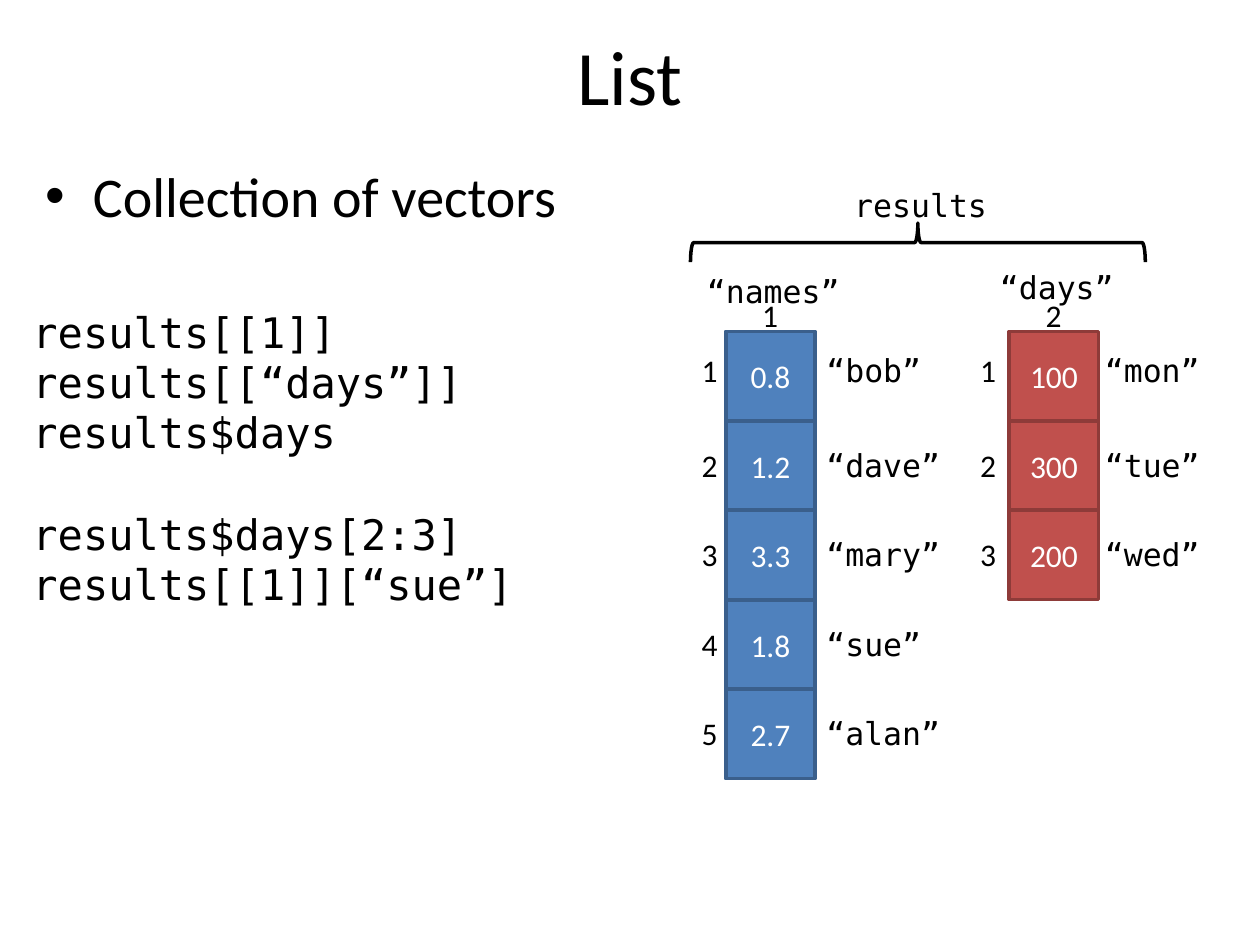
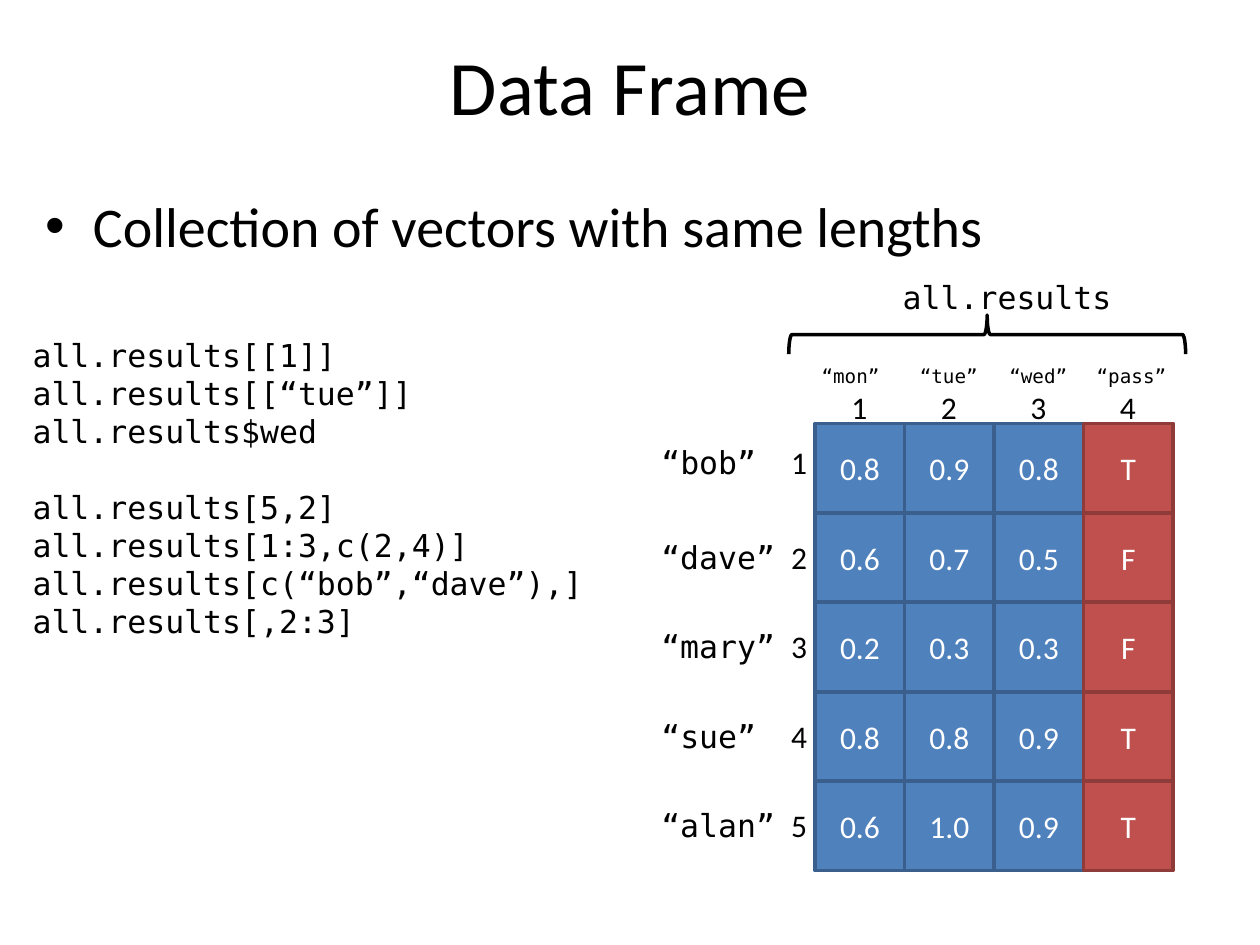
from lxml import etree
from pptx import Presentation
from pptx.dml.color import RGBColor
from pptx.enum.shapes import MSO_SHAPE as Shape
from pptx.enum.text import MSO_ANCHOR as Anchor, MSO_AUTO_SIZE as AutoSize, PP_ALIGN as Align
from pptx.oxml.ns import qn
from pptx.util import Inches, Pt

BLACK = RGBColor(0x00, 0x00, 0x00)
WHITE = RGBColor(0xFF, 0xFF, 0xFF)
BLUE = RGBColor(0x4F, 0x81, 0xBD)
DARK_BLUE = RGBColor(0x3A, 0x5F, 0x8C)
RED = RGBColor(0xC0, 0x50, 0x4D)
DARK_RED = RGBColor(0x8E, 0x3B, 0x39)
NUMERIC = (BLUE, DARK_BLUE)
OTHER = (RED, DARK_RED)

BODY_FONT = "Calibri"
CODE_FONT = "DejaVu Sans Mono"
CHARACTER_WIDTH = {BODY_FONT: 0.52, CODE_FONT: 0.61}  # in ems, rounded up
CODE_LINE_HEIGHT = 1.2  # in ems
INSET = 0.1
CELL = 0.71
LABEL_HEIGHT = 0.4
BRACE_HEIGHT = 0.31

TITLE_FRAME = {"word_wrap": True, "vertical_anchor": Anchor.MIDDLE, "auto_size": AutoSize.NONE}
BULLET_FRAME = {"word_wrap": True, "vertical_anchor": Anchor.TOP}
LABEL_FRAME = {"word_wrap": False, "vertical_anchor": Anchor.TOP,
               "auto_size": AutoSize.SHAPE_TO_FIT_TEXT}


def set_values(target, values):
    for name, value in values.items():
        setattr(target, name, value)


def write(paragraph, text, size=18, font=BODY_FONT, color=BLACK, align=Align.LEFT):
    paragraph.alignment = align
    run = paragraph.add_run()
    run.text = text
    set_values(run.font, {"name": font, "size": Pt(size)})
    run.font.color.rgb = color


def place(shape, left, top, width, height):
    box = {"left": left, "top": top, "width": width, "height": height}
    set_values(shape, {name: Inches(value) for name, value in box.items()})


def text_width(text, size, font):
    return len(text) * size * CHARACTER_WIDTH[font] / 72 + 2 * INSET


def add_label(slide, left, top, text, size=18, font=CODE_FONT):
    width = text_width(text, size, font)
    box = slide.shapes.add_textbox(*map(Inches, (left, top, width, LABEL_HEIGHT)))
    set_values(box.text_frame, LABEL_FRAME)
    write(box.text_frame.paragraphs[0], text, size, font)


def add_centred_label(slide, center, top, text, size=18, font=CODE_FONT):
    left = center - text_width(text, size, font) / 2
    add_label(slide, left, top, text, size, font)


def add_title_slide(presentation, title, title_top, bullet, bullet_top):
    slide = presentation.slides.add_slide(presentation.slide_layouts[5])
    place(slide.shapes.title, 0.5, title_top, 9, 1.25)
    frame = slide.shapes.title.text_frame
    set_values(frame, TITLE_FRAME)
    write(frame.paragraphs[0], title, size=44, align=Align.CENTER)

    body = slide.shapes.add_textbox(*map(Inches, (0.26, bullet_top, 9, 0.74)))
    set_values(body.text_frame, BULLET_FRAME)
    paragraph = body.text_frame.paragraphs[0]
    properties = paragraph._p.get_or_add_pPr()
    properties.set("marL", str(Inches(0.38)))
    properties.set("indent", str(-Inches(0.38)))
    etree.SubElement(properties, qn("a:buFont")).set("typeface", "Arial")
    etree.SubElement(properties, qn("a:buChar")).set("char", "•")
    write(paragraph, bullet, size=32)
    return slide


def add_code(slide, left, top, width, size, blocks):
    """Stack blocks of code lines, one line height apart."""
    box = slide.shapes.add_textbox(*map(Inches, (left, top, width, 2.52)))
    frame = box.text_frame
    set_values(frame, LABEL_FRAME)
    for block_number, block in enumerate(blocks):
        for line_number, line in enumerate(block):
            first = block_number == line_number == 0
            paragraph = frame.paragraphs[0] if first else frame.add_paragraph()
            if block_number and not line_number:
                paragraph.space_before = Pt(round(size * CODE_LINE_HEIGHT))
            write(paragraph, line, size, CODE_FONT)


def add_vector(slide, left, top, number, values, colors):
    """Draw a column of cells with its number above."""
    fill, line = colors
    add_centred_label(slide, left + CELL / 2, top - 0.33, str(number), font=BODY_FONT)
    for row, value in enumerate(values):
        cell = slide.shapes.add_shape(
            Shape.RECTANGLE, *map(Inches, (left, top + row * CELL, CELL, CELL)))
        cell.shadow.inherit = False
        cell.fill.solid()
        cell.fill.fore_color.rgb = fill
        cell.line.color.rgb = line
        cell.line.width = Pt(2)
        cell.text_frame.vertical_anchor = Anchor.MIDDLE
        write(cell.text_frame.paragraphs[0], value, color=WHITE, align=Align.CENTER)


def add_row_labels(slide, left, top, names, number_offset, name_offset):
    """Number and name the rows at the given offsets from the cells' left edge."""
    for row, name in enumerate(names):
        label_top = top + row * CELL + (0.15 if row else 0.11)
        add_label(slide, left + number_offset, label_top, str(row + 1), font=BODY_FONT)
        add_label(slide, left + name_offset, label_top, name)


def add_brace(slide, left, top, width, name, name_shift):
    """Draw a brace that opens downwards, with a name over its tip."""
    center = left + width / 2
    brace = slide.shapes.add_shape(Shape.RIGHT_BRACE, 0, 0, 0, 0)
    place(brace, center - BRACE_HEIGHT / 2, top + BRACE_HEIGHT / 2 - width / 2,
          BRACE_HEIGHT, width)
    brace.rotation = 270
    brace.shadow.inherit = False
    brace.fill.background()
    brace.line.color.rgb = BLACK
    brace.line.width = Pt(2)
    add_centred_label(slide, center + name_shift, top - 0.34, name)


def build_list_slide(presentation):
    slide = add_title_slide(presentation, "List", -0.03, "Collection of vectors", 1.23)
    add_code(slide, 0.16, 2.38, 4.03, 24, [
        ["results[[1]]", "results[[“days”]]", "results$days"],
        ["results$days[2:3]", "results[[1]][“sue”]"],
    ])
    top = 2.63
    vectors = [
        (5.76, "“names”", 0.52, NUMERIC, -0.29, 0.7,
         {"“bob”": "0.8", "“dave”": "1.2", "“mary”": "3.3", "“sue”": "1.8", "“alan”": "2.7"}),
        (8.01, "“days”", 0.55, OTHER, -0.33, 0.66,
         {"“mon”": "100", "“tue”": "300", "“wed”": "200"}),
    ]
    for number, vector in enumerate(vectors, 1):
        left, name, rise, colors, number_offset, name_offset, items = vector
        add_vector(slide, left, top, number, items.values(), colors)
        add_row_labels(slide, left, top, items, number_offset, name_offset)
        add_centred_label(slide, left + CELL / 2 + 0.03, top - rise, name)
    add_brace(slide, 5.48, 1.77, 3.61, "results", 0.03)


def build_data_frame_slide(presentation):
    slide = add_title_slide(presentation, "Data Frame", 0.05,
                            "Collection of vectors with same lengths", 1.47)
    add_code(slide, 0.16, 2.62, 4.62, 18, [
        ["all.results[[1]]", "all.results[[“tue”]]", "all.results$wed"],
        ["all.results[5,2]", "all.results[1:3,c(2,4)]",
         "all.results[c(“bob”,“dave”),]", "all.results[,2:3]"],
    ])
    left, top = 6.47, 3.36
    columns = [
        ("“mon”", -0.07, NUMERIC, ["0.8", "0.6", "0.2", "0.8", "0.6"]),
        ("“tue”", 0, NUMERIC, ["0.9", "0.7", "0.3", "0.8", "1.0"]),
        ("“wed”", 0, NUMERIC, ["0.8", "0.5", "0.3", "0.9", "0.9"]),
        ("“pass”", 0.03, OTHER, ["T", "F", "F", "T", "T"]),
    ]
    for index, (name, shift, colors, values) in enumerate(columns):
        column_left = left + index * CELL
        add_vector(slide, column_left, top, index + 1, values, colors)
        add_centred_label(slide, column_left + CELL / 2 + shift, top - 0.52, name, size=11)
    add_row_labels(slide, left, top,
                   ["“bob”", "“dave”", "“mary”", "“sue”", "“alan”"], -0.29, -1.32)
    add_brace(slide, 6.26, 2.5, 3.15, "all.results", 0.17)


def main():
    presentation = Presentation()
    presentation.slide_width = Inches(10)
    presentation.slide_height = Inches(7.5)
    build_list_slide(presentation)
    build_data_frame_slide(presentation)
    presentation.save("out.pptx")


if __name__ == "__main__":
    main()
